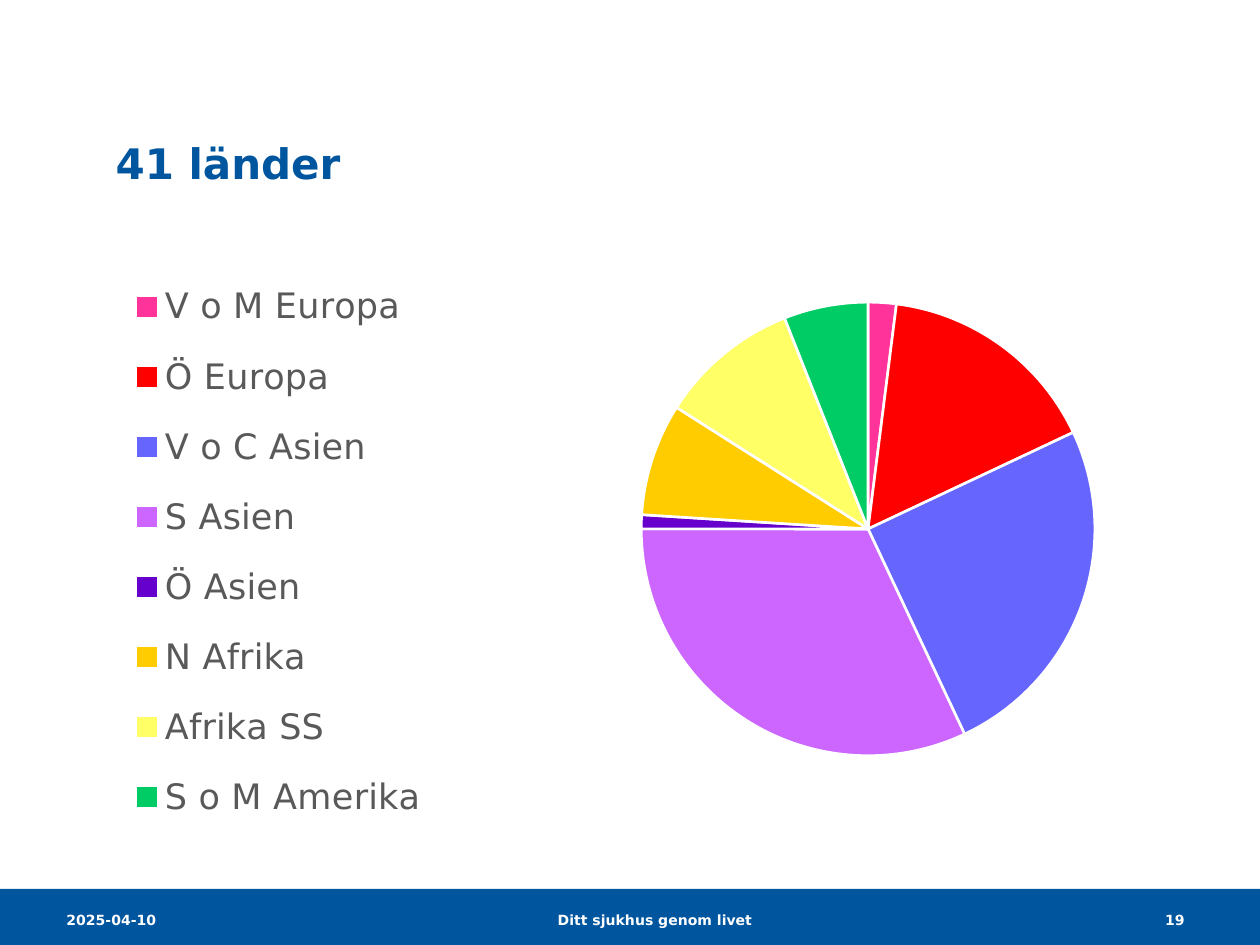
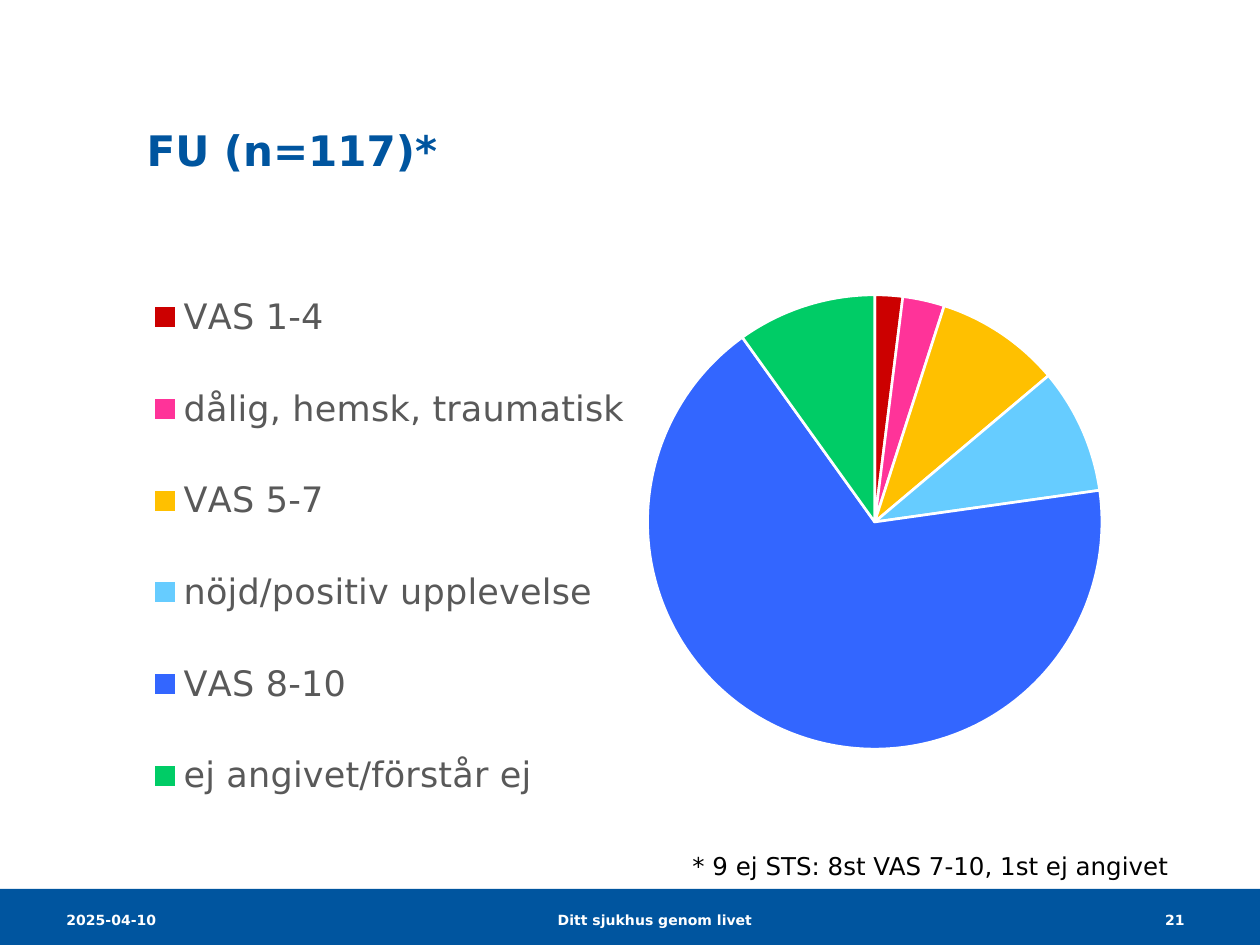
from lxml import etree
from pptx import Presentation
from pptx.chart.data import CategoryChartData
from pptx.dml.color import RGBColor
from pptx.enum.chart import XL_CHART_TYPE, XL_LEGEND_POSITION
from pptx.enum.shapes import MSO_SHAPE
from pptx.enum.text import MSO_ANCHOR, PP_ALIGN
from pptx.oxml import parse_xml
from pptx.oxml.ns import nsdecls, qn
from pptx.util import Pt

PIE = XL_CHART_TYPE.PIE
LEGEND_LEFT, LEGEND_BOTTOM = XL_LEGEND_POSITION.LEFT, XL_LEGEND_POSITION.BOTTOM
RECTANGLE = MSO_SHAPE.RECTANGLE
TOP, MIDDLE = MSO_ANCHOR.TOP, MSO_ANCHOR.MIDDLE
LEFT, CENTER, RIGHT = PP_ALIGN.LEFT, PP_ALIGN.CENTER, PP_ALIGN.RIGHT

FONT = "DejaVu Sans"
BLUE = RGBColor(0x00, 0x55, 0x9F)
WHITE = RGBColor(0xFF, 0xFF, 0xFF)
BLACK = RGBColor(0x00, 0x00, 0x00)
GREY = RGBColor(0x59, 0x59, 0x59)
PINK = RGBColor(0xFF, 0x33, 0x99)
RED = RGBColor(0xFF, 0x00, 0x00)
DARK_RED = RGBColor(0xCC, 0x00, 0x00)
PERIWINKLE = RGBColor(0x66, 0x66, 0xFF)
LILAC = RGBColor(0xCC, 0x66, 0xFF)
PURPLE = RGBColor(0x66, 0x00, 0xCC)
GOLD = RGBColor(0xFF, 0xCC, 0x00)
AMBER = RGBColor(0xFF, 0xC0, 0x00)
YELLOW = RGBColor(0xFF, 0xFF, 0x66)
GREEN = RGBColor(0x00, 0xCC, 0x66)
SKY = RGBColor(0x66, 0xCC, 0xFF)
ROYAL = RGBColor(0x33, 0x66, 0xFF)

PX = 914400 / 126


def px(*lengths):
    return [round(length * PX) for length in lengths]


def write(holder, text, size, color, bold=False, align=LEFT, anchor=TOP):
    frame = holder.text_frame
    frame.word_wrap = True
    frame.vertical_anchor = anchor
    frame.text = text
    paragraph = frame.paragraphs[0]
    paragraph.alignment = align
    font = paragraph.font
    font.name, font.size, font.bold = FONT, Pt(size), bold
    font.color.rgb = color


FOOTER_BOXES = [
    ("2025-04-10", 54, 294, LEFT),
    ("Ditt sjukhus genom livet", 501, 308, CENTER),
    (None, 997, 200, RIGHT),
]

PAGES = [
    {
        "title": "41 länder",
        "title_at": (103, 108, 1094, 110),
        "number": "19",
        "chart_at": (63, 218, 1134, 648),
        "legend": LEGEND_LEFT,
        "legend_at": (0.05, 0.06, 0.28, 0.91),
        "plot_at": (0.51, 0.12, 0.4, 0.72),
        "slices": [
            ("V o M Europa", 2, PINK),
            ("Ö Europa", 16, RED),
            ("V o C Asien", 25, PERIWINKLE),
            ("S Asien", 32, LILAC),
            ("Ö Asien", 1, PURPLE),
            ("N Afrika", 8, GOLD),
            ("Afrika SS", 10, YELLOW),
            ("S o M Amerika", 6, GREEN),
        ],
        "footnote": None,
    },
    {
        "title": "FU (n=117)*",
        "title_at": (134, 95, 1094, 110),
        "number": "21",
        "chart_at": (102, 204, 1066, 699),
        "legend": LEGEND_BOTTOM,
        "legend_at": (0.04, 0.06, 0.46, 0.86),
        "plot_at": (0.5, 0.13, 0.45, 0.65),
        "slices": [
            ("VAS 1-4", 2, DARK_RED),
            ("dålig, hemsk, traumatisk", 3, PINK),
            ("VAS 5-7", 9, AMBER),
            ("nöjd/positiv upplevelse", 9, SKY),
            ("VAS 8-10", 68, ROYAL),
            ("ej angivet/förstår ej", 10, GREEN),
        ],
        "footnote": "* 9 ej STS: 8st VAS 7-10, 1st ej angivet",
    },
]

prs = Presentation()
prs.slide_width, prs.slide_height = px(1260, 945)
title_only = prs.slide_layouts[5]

for page in PAGES:
    slide = prs.slides.add_slide(title_only)

    band = slide.shapes.add_shape(RECTANGLE, *px(0, 889, 1260, 56))
    band.shadow.inherit = False
    band.fill.solid()
    band.fill.fore_color.rgb = BLUE
    band.line.fill.background()

    for text, left, width, align in FOOTER_BOXES:
        footer = slide.shapes.add_textbox(*px(left, 905, width, 29))
        write(footer, text or page["number"], 8, WHITE, True, align)

    title = slide.shapes.title
    title.left, title.top, title.width, title.height = px(*page["title_at"])
    write(title, page["title"], 24, BLUE, True, anchor=MIDDLE)

    names, values, colors = zip(*page["slices"])
    shares = CategoryChartData()
    shares.categories = names
    shares.add_series("Series 1", values)
    chart = slide.shapes.add_chart(PIE, *px(*page["chart_at"]), shares).chart
    chart.has_title = False
    chart.font.name, chart.font.size = FONT, Pt(10)
    chart.font.color.rgb = BLACK

    chart.has_legend = True
    legend = chart.legend
    legend.position = page["legend"]
    legend.include_in_layout = False
    legend.font.name, legend.font.size = FONT, Pt(20)
    legend.font.color.rgb = GREY

    for index, color in enumerate(colors):
        wedge = chart.plots[0].series[0].points[index].format
        wedge.fill.solid()
        wedge.fill.fore_color.rgb = color
        wedge.line.color.rgb = WHITE
        wedge.line.width = Pt(1.5)

    chart_space = chart.element
    for part, position, area in [("c:plotArea", 0, page["plot_at"]),
                                 ("c:legend", 1, page["legend_at"])]:
        parent = chart_space.find(".//" + qn(part))
        for automatic in parent.findall(qn("c:layout")):
            parent.remove(automatic)
        layout = parse_xml(f"<c:layout {nsdecls('c')}><c:manualLayout/></c:layout>")
        settings = [("xMode", "edge"), ("yMode", "edge"), *zip("xywh", area)]
        if part == "c:plotArea":
            settings.insert(0, ("layoutTarget", "inner"))
        for tag, value in settings:
            etree.SubElement(layout[0], qn("c:" + tag)).set("val", str(value))
        parent.insert(position, layout)

    clear = parse_xml(f"<c:spPr {nsdecls('c', 'a')}><a:noFill/><a:ln><a:noFill/></a:ln></c:spPr>")
    chart_space.find(qn("c:txPr")).addprevious(clear)

    if page["footnote"]:
        footnote = slide.shapes.add_textbox(*px(680, 828, 580, 76))
        write(footnote, page["footnote"], 14, BLACK, anchor=MIDDLE)

prs.save("out.pptx")
